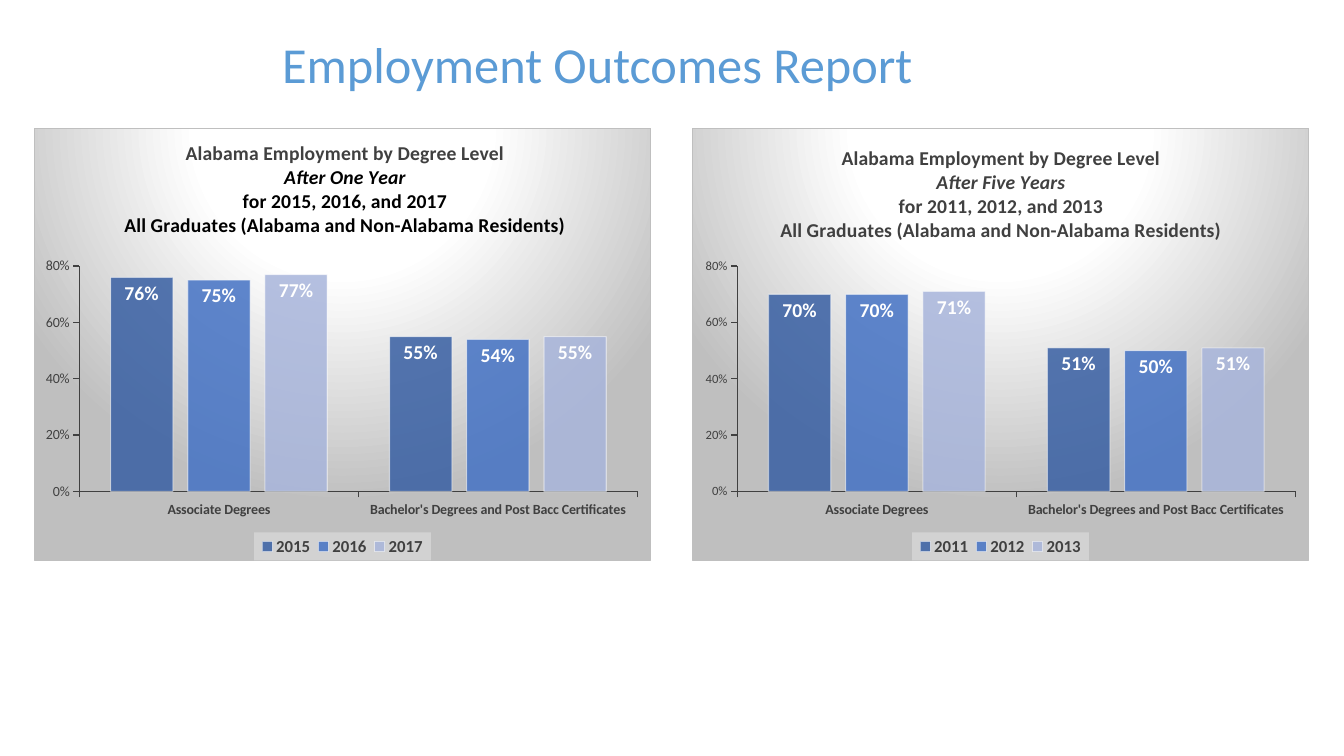
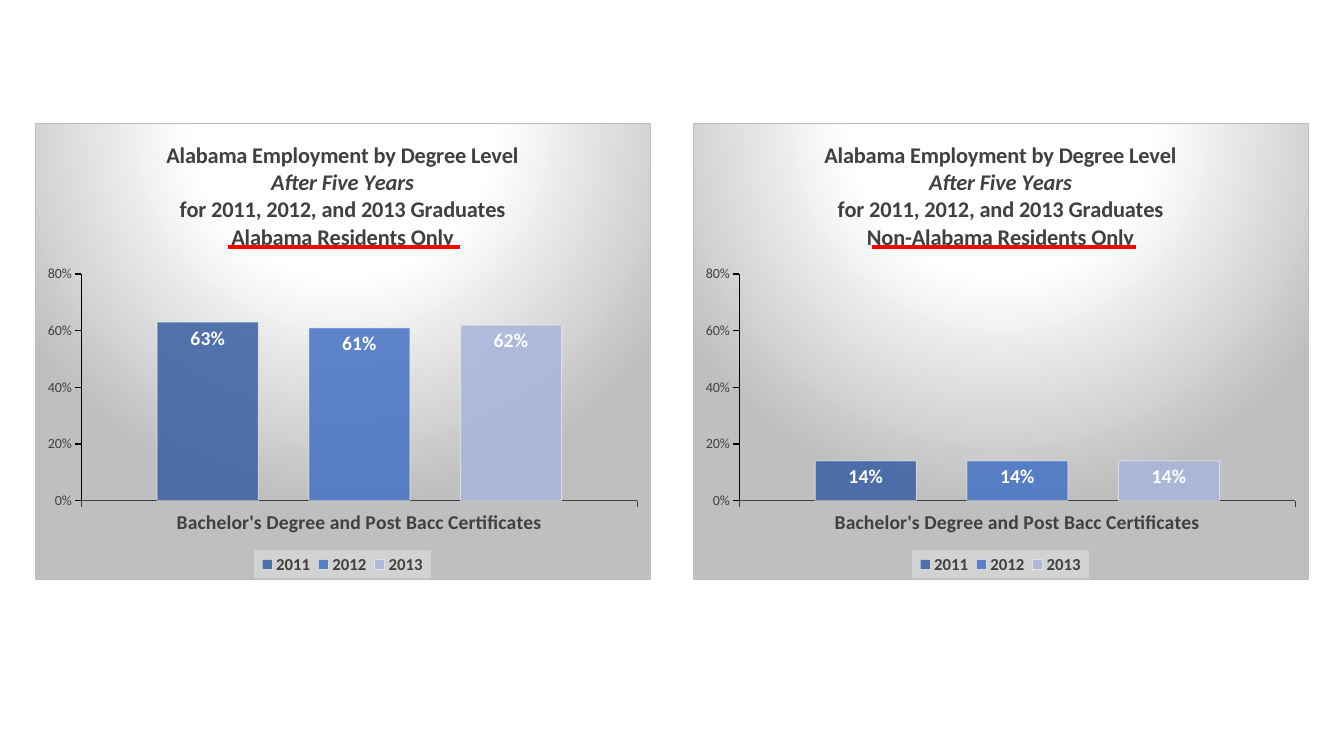
from lxml import etree
from pptx import Presentation
from pptx.chart.data import CategoryChartData
from pptx.dml.color import RGBColor
from pptx.enum.chart import XL_CHART_TYPE as ChartType
from pptx.enum.chart import XL_LABEL_POSITION as LabelPosition
from pptx.enum.chart import XL_LEGEND_POSITION as LegendPosition
from pptx.enum.chart import XL_TICK_MARK as TickMark
from pptx.enum.shapes import MSO_CONNECTOR as Connector
from pptx.enum.text import MSO_ANCHOR as Anchor
from pptx.enum.text import MSO_AUTO_SIZE as AutoSize
from pptx.enum.text import PP_ALIGN as Align
from pptx.oxml import parse_xml
from pptx.oxml.ns import nsdecls, qn
from pptx.util import Pt

# Shared look
EMU_PER_PX = 914400 / 100.8
FONT = "Calibri"
TITLE_BLUE = RGBColor(0x5B, 0x9B, 0xD5)
DARK_GREY = RGBColor(0x40, 0x40, 0x40)
BLACK = RGBColor(0x00, 0x00, 0x00)
WHITE = RGBColor(0xFF, 0xFF, 0xFF)
RED = RGBColor(0xFF, 0x00, 0x00)
PANEL_GREY = RGBColor(0xBF, 0xBF, 0xBF)
LEGEND_GREY = RGBColor(0xF2, 0xF2, 0xF2)
SERIES_COLORS = (
    RGBColor(0x38, 0x5F, 0xA3),
    RGBColor(0x44, 0x72, 0xC4),
    RGBColor(0xA8, 0xB5, 0xDB),
)
FILL_ALPHA, OUTLINE_ALPHA = "85000", "50000"
PANEL_STEP = 658  # distance between the two charts of a slide

# Geometry and format of the charts on each slide; areas are relative to the chart
DEGREE_STYLE = {
    "frame": (34, 128, 617, 433), "plot": (45, 138, 559, 226),
    "legend": (220, 405, 177, 28), "title_size": 14, "category_size": 10,
    "gap": 100, "overlap": -24, "axis_color": DARK_GREY,
}
RESIDENT_STYLE = {
    "frame": (35, 123, 616, 457), "plot": (46, 151, 557, 227),
    "legend": (219, 428, 177, 28), "title_size": 16, "category_size": 14,
    "gap": 150, "overlap": -50, "axis_color": BLACK,
}

# Content
HEADING = "Alabama Employment by Degree Level"
ALL_GRADUATES = "All Graduates (Alabama and Non-Alabama Residents)"
DEGREES = ("Associate Degrees", "Bachelor's Degrees and Post Bacc Certificates")
BACHELORS = ("Bachelor's Degree and Post Bacc Certificates",)
DEGREE_CHARTS = (
    {
        "title": (HEADING, "After One Year", "for 2015, 2016, and 2017", ALL_GRADUATES),
        "title_at": (87, 8), "title_color": BLACK, "value_size": 10,
        "series": {"2015": (0.76, 0.55), "2016": (0.75, 0.54), "2017": (0.77, 0.55)},
    },
    {
        "title": (HEADING, "After Five Years", "for 2011, 2012, and 2013", ALL_GRADUATES),
        "title_at": (85, 13), "title_color": DARK_GREY, "value_size": 9,
        "series": {"2011": (0.7, 0.51), "2012": (0.7, 0.5), "2013": (0.71, 0.51)},
    },
)
RESIDENT_CHARTS = tuple(
    {
        "title": (HEADING, "After Five Years", "for 2011, 2012, and 2013 Graduates", group),
        "title_at": (128, 14), "title_color": DARK_GREY, "value_size": 10,
        "series": {year: (rate,) for year, rate in zip(("2011", "2012", "2013"), rates)},
    }
    for group, rates in (
        ("Alabama Residents Only", (0.63, 0.61, 0.62)),
        ("Non-Alabama Residents Only", (0.14, 0.14, 0.14)),
    )
)


def px(length):
    return round(length * EMU_PER_PX)


def set_font(font, size, color, bold=False, italic=False):
    formats = {"name": FONT, "size": Pt(size), "bold": bold, "italic": italic}
    for name, value in formats.items():
        setattr(font, name, value)
    font.color.rgb = color


def set_line(line, color, width):
    line.color.rgb = color
    line.width = Pt(width)


def set_layout(parent, previous, frame, area, target=""):
    """Place a chart part; area is in px within the chart frame."""
    for old in parent.findall(qn("c:layout")):
        parent.remove(old)
    sizes = (frame[2], frame[3]) * 2
    places = "".join(
        f'<c:{tag} val="{length / size:.4f}"/>'
        for tag, length, size in zip("xywh", area, sizes)
    )
    layout = parse_xml(
        f'<c:layout {nsdecls("c")}><c:manualLayout>{target}'
        f'<c:xMode val="edge"/><c:yMode val="edge"/>{places}'
        "</c:manualLayout></c:layout>"
    )
    if previous:
        parent.find(qn(previous)).addnext(layout)
    else:
        parent.insert(0, layout)


def fill_panel(chart):
    """Give the chart its radial background and thin border."""
    stops = "".join(
        f'<a:gs pos="{place}"><a:srgbClr val="{color}"/></a:gs>'
        for place, color in ((0, WHITE), (39000, WHITE), (100000, PANEL_GREY))
    )
    panel = parse_xml(
        f'<c:spPr {nsdecls("c", "a")}><a:gradFill><a:gsLst>{stops}</a:gsLst>'
        '<a:path path="circle">'
        '<a:fillToRect l="50000" t="-80000" r="50000" b="180000"/></a:path></a:gradFill>'
        f'<a:ln w="9525"><a:solidFill><a:srgbClr val="{PANEL_GREY}"/></a:solidFill></a:ln>'
        "</c:spPr>"
    )
    chart.element.find(qn("c:chart")).addnext(panel)


def add_chart_title(chart, details, style):
    frame = chart.chart_title.text_frame
    for index, text in enumerate(details["title"]):
        para = frame.add_paragraph() if index else frame.paragraphs[0]
        span = para.add_run()
        span.text = text
        color = details["title_color"] if index else DARK_GREY
        set_font(span.font, style["title_size"], color, bold=True, italic=index == 1)
    title = chart.chart_title._element
    set_layout(title, "c:tx", style["frame"], details["title_at"])


def format_axes(chart, details, style):
    category, value = chart.category_axis, chart.value_axis
    for axis, color in ((category, DARK_GREY), (value, style["axis_color"])):
        axis.has_major_gridlines = False
        axis.major_tick_mark = TickMark.OUTSIDE
        set_line(axis.format.line, color, 1)
    set_font(category.tick_labels.font, style["category_size"], DARK_GREY, bold=True)
    set_font(value.tick_labels.font, details["value_size"], DARK_GREY)
    scale = {"minimum_scale": 0, "maximum_scale": 0.8, "major_unit": 0.2}
    for name, setting in scale.items():
        setattr(value, name, setting)
    value.tick_labels.number_format = "0%"
    value.tick_labels.number_format_is_linked = False


def format_series(chart):
    for series, color in zip(chart.plots[0].series, SERIES_COLORS):
        series.format.fill.solid()
        series.format.fill.fore_color.rgb = color
        set_line(series.format.line, WHITE, 0.75)
        labels = series.data_labels
        formats = {
            "show_value": True, "position": LabelPosition.INSIDE_END,
            "number_format": "0%", "number_format_is_linked": False,
        }
        for name, value in formats.items():
            setattr(labels, name, value)
        set_font(labels.font, 14, WHITE, bold=True)
    # Transparency of bars and their outlines
    for bars in chart.element.iter(qn("c:ser")):
        colors = bars.find(qn("c:spPr")).iter(qn("a:srgbClr"))
        for color, alpha in zip(list(colors), (FILL_ALPHA, OUTLINE_ALPHA)):
            etree.SubElement(color, qn("a:alpha")).set("val", alpha)


def format_legend(chart, style):
    chart.has_legend = True
    legend = chart.legend
    legend.position = LegendPosition.BOTTOM
    legend.include_in_layout = False
    set_font(legend.font, 12, DARK_GREY, bold=True)
    element = legend._element
    set_layout(element, "c:legendPos", style["frame"], style["legend"])
    backing = parse_xml(
        f'<c:spPr {nsdecls("c", "a")}><a:solidFill><a:srgbClr val="{LEGEND_GREY}">'
        '<a:alpha val="39000"/></a:srgbClr></a:solidFill></c:spPr>'
    )
    element.find(qn("c:overlay")).addnext(backing)


def add_column_chart(page, left, categories, details, style):
    data = CategoryChartData(number_format="0%")
    data.categories = categories
    for name, values in details["series"].items():
        data.add_series(name, values)
    _, top, width, height = style["frame"]
    box = page.shapes.add_chart(
        ChartType.COLUMN_CLUSTERED, px(left), px(top), px(width), px(height), data
    )
    chart = box.chart
    set_font(chart.font, 10, BLACK)
    plot = chart.plots[0]
    for name, value in {
        "gap_width": style["gap"], "overlap": style["overlap"], "vary_by_categories": False,
    }.items():
        setattr(plot, name, value)
    add_chart_title(chart, details, style)
    format_axes(chart, details, style)
    format_series(chart)
    format_legend(chart, style)
    plot_area = chart.element.find(qn("c:chart")).find(qn("c:plotArea"))
    set_layout(plot_area, None, style["frame"], style["plot"],
               '<c:layoutTarget val="inner"/>')
    fill_panel(chart)


def add_chart_pair(page, categories, charts, style):
    for index, details in enumerate(charts):
        left = style["frame"][0] + index * PANEL_STEP
        add_column_chart(page, left, categories, details, style)


def add_page_title(page, text):
    box = page.shapes.title
    for name, length in zip(("left", "top", "width", "height"), (272, 28, 757, 72)):
        setattr(box, name, px(length))
    frame = box.text_frame
    formats = {
        "word_wrap": True, "auto_size": AutoSize.SHAPE_TO_FIT_TEXT,
        "vertical_anchor": Anchor.TOP,
    }
    for name, value in formats.items():
        setattr(frame, name, value)
    para = frame.paragraphs[0]
    para.alignment = Align.LEFT
    span = para.add_run()
    span.text = text
    set_font(span.font, 36, TITLE_BLUE)


def add_underline(page, start, end, y):
    rule = page.shapes.add_connector(Connector.STRAIGHT, px(start), px(y), px(end), px(y))
    set_line(rule.line, RED, 3)
    etree.SubElement(rule._element.spPr, qn("a:effectLst"))


def main():
    deck = Presentation()
    deck.slide_width, deck.slide_height = px(1344), px(756)
    title_only, blank = deck.slide_layouts[5], deck.slide_layouts[6]

    # Outcomes by degree level
    page = deck.slides.add_slide(title_only)
    add_page_title(page, "Employment Outcomes Report")
    add_chart_pair(page, DEGREES, DEGREE_CHARTS, DEGREE_STYLE)

    # Outcomes by residency
    page = deck.slides.add_slide(blank)
    add_chart_pair(page, BACHELORS, RESIDENT_CHARTS, RESIDENT_STYLE)
    for start, end in ((228, 460), (872, 1136)):
        add_underline(page, start, end, 247)

    deck.save("out.pptx")


if __name__ == "__main__":
    main()
